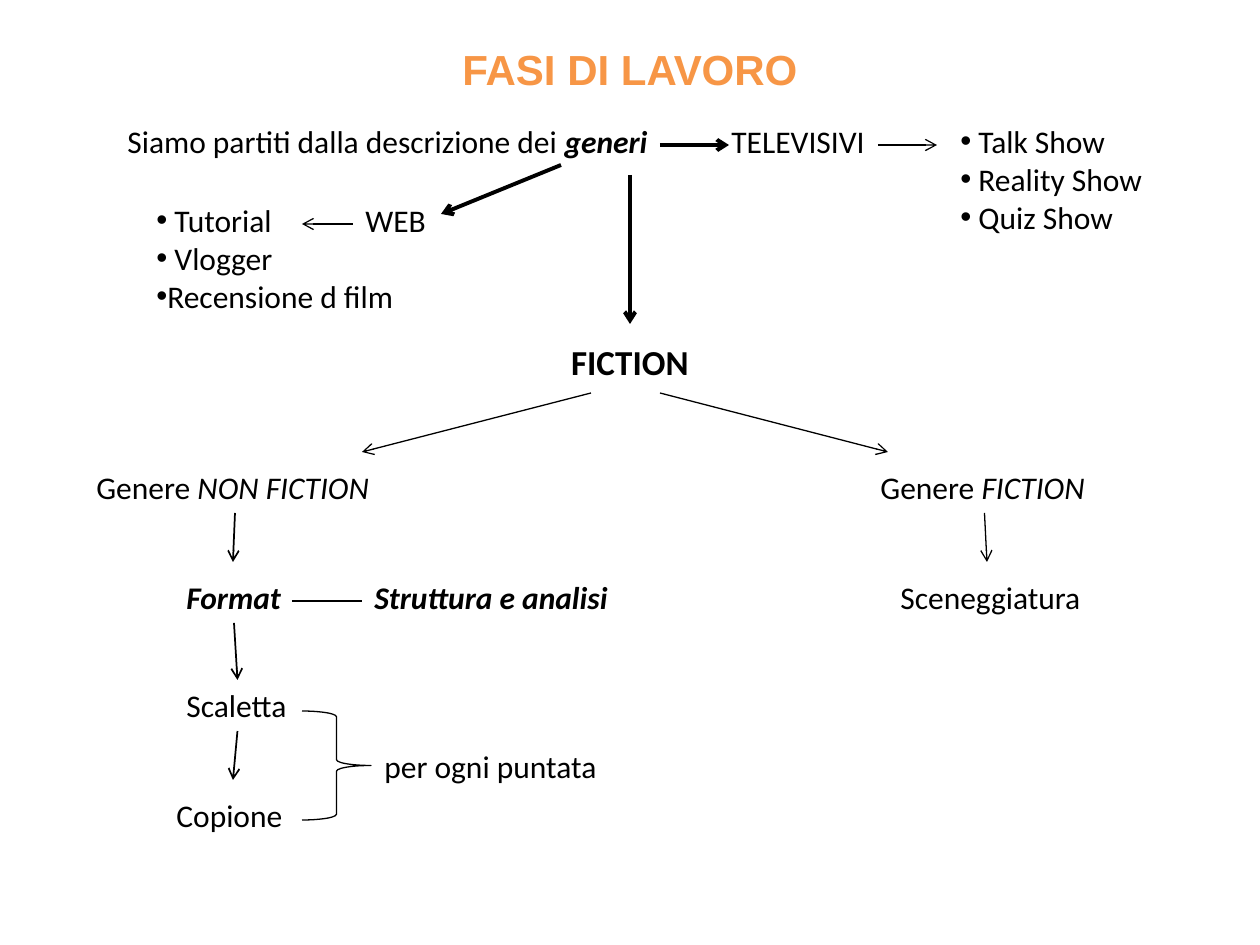
from lxml import etree
from pptx import Presentation
from pptx.dml.color import RGBColor
from pptx.enum.shapes import MSO_CONNECTOR, MSO_SHAPE
from pptx.enum.text import MSO_AUTO_SIZE, PP_ALIGN
from pptx.oxml.ns import qn
from pptx.util import Emu, Pt

STRAIGHT = MSO_CONNECTOR.STRAIGHT
RIGHT_BRACE = MSO_SHAPE.RIGHT_BRACE
GROW = MSO_AUTO_SIZE.SHAPE_TO_FIT_TEXT
CENTER = PP_ALIGN.CENTER
BLACK = RGBColor(0x00, 0x00, 0x00)
ORANGE = RGBColor(0xF7, 0x96, 0x46)
EMU_PER_PX = 914400 / 126
WIDTH, HEIGHT = 1260, 945
LINE_HEIGHT = 51
TOP, BOTTOM = 0, 2


def px(value):
    """Turn whole pixels into EMU."""
    return Emu(round(value * EMU_PER_PX))


def add_frame(slide, left, top, width, height, wrap=False):
    """Add an empty text box and return it."""
    box = slide.shapes.add_textbox(px(left), px(top), px(width), px(height))
    box.text_frame.word_wrap = wrap
    box.text_frame.auto_size = GROW
    return box


def style_run(run, size=18, bold=False, italic=False, font="Calibri", color=BLACK):
    """Set the font of one run."""
    run.font.name = font
    run.font.size = Pt(size)
    run.font.bold = bold
    run.font.italic = italic
    run.font.color.rgb = color


def add_label(slide, left, top, width, plain="", accent="", bold=False, italic=True):
    """Add a one-line label with a plain start and an accented end."""
    label = add_frame(slide, left, top, width, LINE_HEIGHT)
    paragraph = label.text_frame.paragraphs[0]
    for text, is_bold, is_italic in ((plain, False, False), (accent, bold, italic)):
        if text:
            run = paragraph.add_run()
            run.text = text
            style_run(run, bold=is_bold, italic=is_italic)
    return label


def add_heading(slide, top, height, text, **style):
    """Add a bold heading centred across the slide."""
    heading = add_frame(slide, 0, top, WIDTH, height, wrap=True)
    heading.text_frame.text = text
    paragraph = heading.text_frame.paragraphs[0]
    paragraph.alignment = CENTER
    style_run(paragraph.runs[0], bold=True, **style)


def add_bullets(slide, left, top, width, items):
    """Add a bulleted list of examples."""
    examples = add_frame(slide, left, top, width, 127)
    examples.text_frame.text = "\n".join(items)
    for paragraph in examples.text_frame.paragraphs:
        style_run(paragraph.runs[0])
        properties = paragraph._p.get_or_add_pPr()
        etree.SubElement(properties, qn("a:buFont"), typeface="Arial")
        etree.SubElement(properties, qn("a:buChar"), char="•")


def add_line(slide, start, end, weight=0.75, arrow=True, source=None, target=None):
    """Add a line, joined to the bottom of source and the top of target."""
    line = slide.shapes.add_connector(STRAIGHT, *map(px, start + end))
    line.line.color.rgb = BLACK
    line.line.width = Pt(weight)
    if arrow:
        etree.SubElement(line.line._get_or_add_ln(), qn("a:tailEnd"), type="arrow")
    etree.SubElement(line._element.spPr, qn("a:effectLst"))
    if source is not None:
        line.begin_connect(source, BOTTOM)
    if target is not None:
        line.end_connect(target, TOP)


def add_brace(slide, left, top, width, height):
    """Add the brace that groups the last two steps."""
    brace = slide.shapes.add_shape(RIGHT_BRACE, *map(px, (left, top, width, height)))
    brace.shadow.inherit = False
    brace.fill.background()
    brace.line.color.rgb = BLACK
    brace.line.width = Pt(0.75)


def add_genres(slide):
    """Add the genres and their examples."""
    add_label(slide, 115, 116, 549, "Siamo partiti dalla descrizione dei ", "generi", bold=True)
    add_label(slide, 719, 116, 160, "TELEVISIVI")
    add_label(slide, 353, 195, 118, "WEB")
    add_bullets(slide, 144, 195, 266, [" Tutorial", " Vlogger", "Recensione d film"])
    add_bullets(slide, 948, 116, 217, [" Talk Show", " Reality Show", " Quiz Show"])
    for start, end in (
        ((660, 145), (729, 145)),
        ((561, 165), (441, 214)),
        ((630, 175), (630, 324)),
    ):
        add_line(slide, start, end, weight=2.25)
    add_line(slide, (353, 224), (302, 224))
    add_line(slide, (878, 145), (937, 145))


def add_phases(slide):
    """Add the working steps of the two fiction branches."""
    non_fiction = add_label(slide, 84, 462, 302, "Genere ", "NON FICTION")
    fiction = add_label(slide, 868, 462, 233, "Genere ", "FICTION")
    layout_step = add_label(slide, 174, 572, 120, accent="Format", bold=True)
    add_label(slide, 362, 572, 262, accent="Struttura e analisi", bold=True)
    add_label(slide, 888, 572, 208, "Sceneggiatura")
    outline = add_label(slide, 174, 680, 127, "Scaletta")
    add_label(slide, 164, 790, 132, "Copione")
    add_label(slide, 372, 741, 241, "per ogni puntata")
    add_brace(slide, 302, 711, 69, 109)
    add_line(slide, (591, 393), (362, 452))
    add_line(slide, (660, 393), (888, 452))
    add_line(slide, (235, 513), (233, 562), weight=1, source=non_fiction)
    add_line(slide, (984, 513), (987, 562), source=fiction)
    add_line(slide, (234, 623), (237, 680), weight=1, source=layout_step, target=outline)
    add_line(slide, (237, 731), (233, 780), weight=1, source=outline)
    add_line(slide, (292, 601), (362, 601), weight=1, arrow=False)


def main():
    """Build the slide and save it."""
    deck = Presentation()
    deck.slide_width, deck.slide_height = px(WIDTH), px(HEIGHT)
    slide = deck.slides.add_slide(deck.slide_layouts[6])
    add_heading(slide, 37, 64, "FASI DI LAVORO", size=24, font="Arial", color=ORANGE)
    add_heading(slide, 334, 55, "FICTION", size=20)
    add_genres(slide)
    add_phases(slide)
    deck.save("out.pptx")


if __name__ == "__main__":
    main()
